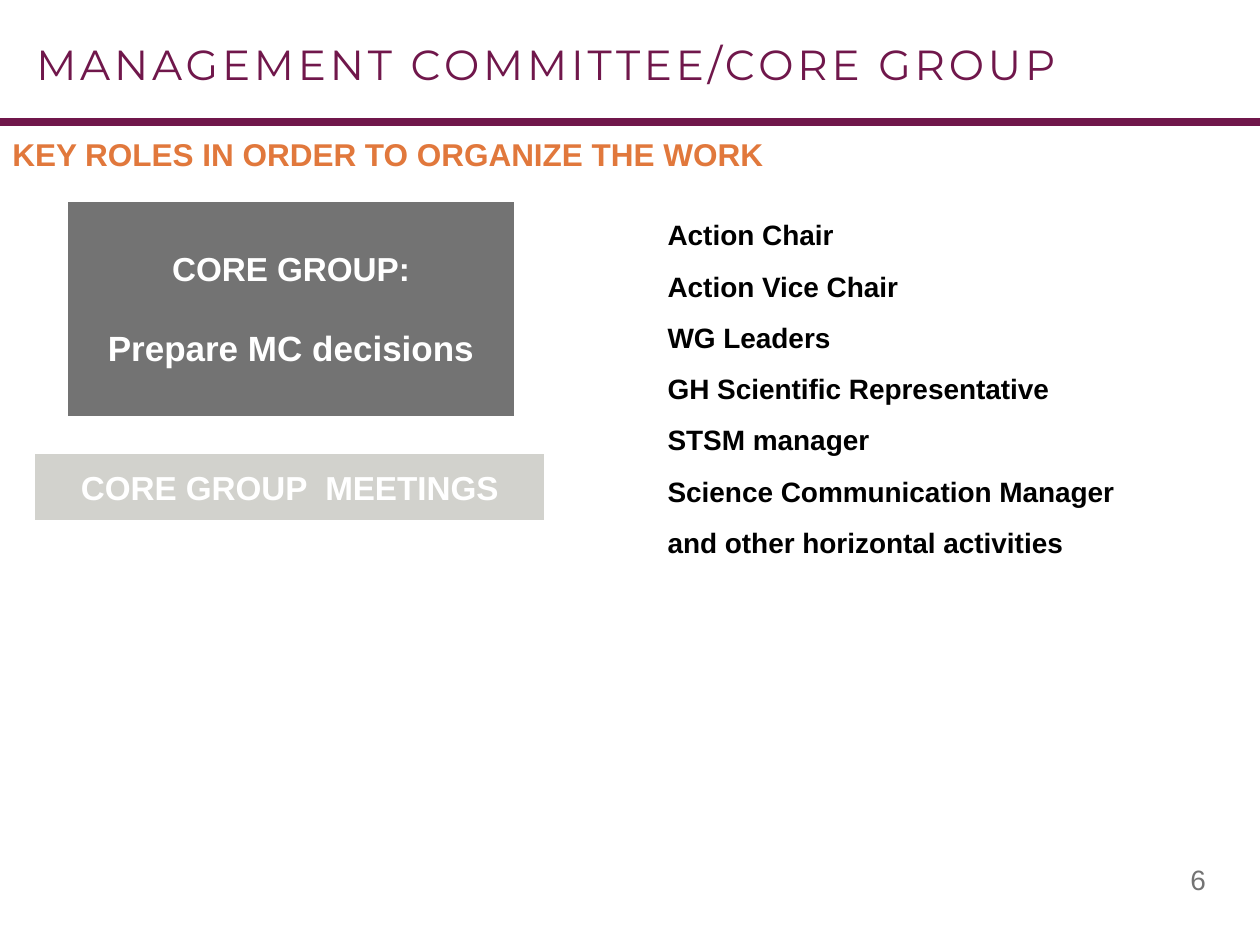
"""Build the Management Committee / Core Group slide."""
from dataclasses import dataclass

from lxml.etree import SubElement
from pptx import Presentation
from pptx.dml.color import RGBColor as RGB
from pptx.enum.shapes import MSO_CONNECTOR as Conn, MSO_SHAPE as Shape
from pptx.enum.text import MSO_ANCHOR as Anchor, PP_ALIGN as Align
from pptx.oxml.ns import qn
from pptx.util import Inches, Pt


@dataclass(frozen=True)
class Theme:
    plum: RGB = RGB(0x70, 0x17, 0x4B)
    orange: RGB = RGB(0xE1, 0x78, 0x3C)
    gray: RGB = RGB(0x73, 0x73, 0x73)
    pale: RGB = RGB(0xD2, 0xD2, 0xCD)
    white: RGB = RGB(0xFF, 0xFF, 0xFF)
    black: RGB = RGB(0, 0, 0)
    title_font: str = "Montserrat"
    body_font: str = "Arial"
    title: Pt = Pt(24)
    subtitle: Pt = Pt(18)
    box: Pt = Pt(19)
    box_large: Pt = Pt(20)
    body: Pt = Pt(16)
    tracking: int = 220


T = Theme()
ROLES = [
    "Action Chair",
    "Action Vice Chair",
    "WG Leaders",
    "GH Scientific Representative",
    "STSM manager",
    "Science Communication Manager",
    "and other horizontal activities",
]


def apply_format(target, values):
    for name, value in values.items():
        setattr(target, name, value)


def add_paragraph(tf, text, size, color, font=T.body_font, bold=True, **layout):
    p = tf.paragraphs[0] if not tf.text else tf.add_paragraph()
    apply_format(p, layout)
    r = p.add_run()
    r.text = text
    apply_format(r.font, {"name": font, "size": size, "bold": bold})
    r.font.color.rgb = color
    return r


def add_text_box(s, left, top, width, height):
    tf = s.shapes.add_textbox(*map(Inches, (left, top, width, height))).text_frame
    tf.word_wrap = True
    return tf


def add_box(s, left, top, width, height, fill):
    sp = s.shapes.add_shape(Shape.RECTANGLE, *map(Inches, (left, top, width, height)))
    sp.shadow.inherit = False
    sp.fill.solid()
    sp.fill.fore_color.rgb = fill
    sp.line.color.rgb = T.white
    sp.line.width = Pt(1.5)
    apply_format(sp.text_frame, {"word_wrap": False, "vertical_anchor": Anchor.MIDDLE})
    return sp.text_frame


def add_rule(s, y, width):
    line = s.shapes.add_connector(Conn.STRAIGHT, 0, Inches(y), width, Inches(y))
    line.line.color.rgb = T.plum
    line.line.width = Pt(4.5)
    SubElement(line._element.spPr, qn("a:effectLst"))


def add_title(s, text):
    tf = add_text_box(s, 0.19, 0.3, 9.67, 0.46)
    r = add_paragraph(tf, text, T.title, T.plum, T.title_font, False, line_spacing=0.9)
    r.font._element.set("spc", str(T.tracking))


def add_roles(s, roles):
    tf = add_text_box(s, 5.2, 1.71, 4.65, 2.82)
    for i, role in enumerate(roles):
        add_paragraph(tf, role, T.body, T.black, line_spacing=0.9,
                      space_before=Pt(6 if i else 0), space_after=Pt(6))


def main():
    prs = Presentation()
    apply_format(prs, {"slide_width": Inches(10), "slide_height": Inches(7.5)})
    s = prs.slides.add_slide(prs.slide_layouts[6])

    add_title(s, "MANAGEMENT COMMITTEE/CORE GROUP")
    add_rule(s, 0.97, prs.slide_width)
    add_paragraph(add_text_box(s, 0, 1.06, 10, 0.47),
                  "KEY ROLES IN ORDER TO ORGANIZE THE WORK", T.subtitle, T.orange,
                  alignment=Align.JUSTIFY, line_spacing=0.9)

    core = add_box(s, 0.53, 1.59, 3.56, 1.72, T.gray)
    add_paragraph(core, "CORE GROUP:", T.box, T.white, alignment=Align.CENTER)
    add_paragraph(core, "Prepare MC decisions", T.box_large, T.white,
                  alignment=Align.CENTER, space_before=Pt(22))
    meetings = add_box(s, 0.27, 3.59, 4.06, 0.55, T.pale)
    add_paragraph(meetings, "CORE GROUP  MEETINGS", T.box, T.white, alignment=Align.CENTER)

    add_roles(s, ROLES)
    add_paragraph(add_text_box(s, 7.21, 6.8, 2.46, 0.37), "6", T.body, T.gray,
                  bold=False, alignment=Align.RIGHT)
    prs.save("out.pptx")


if __name__ == "__main__":
    main()
